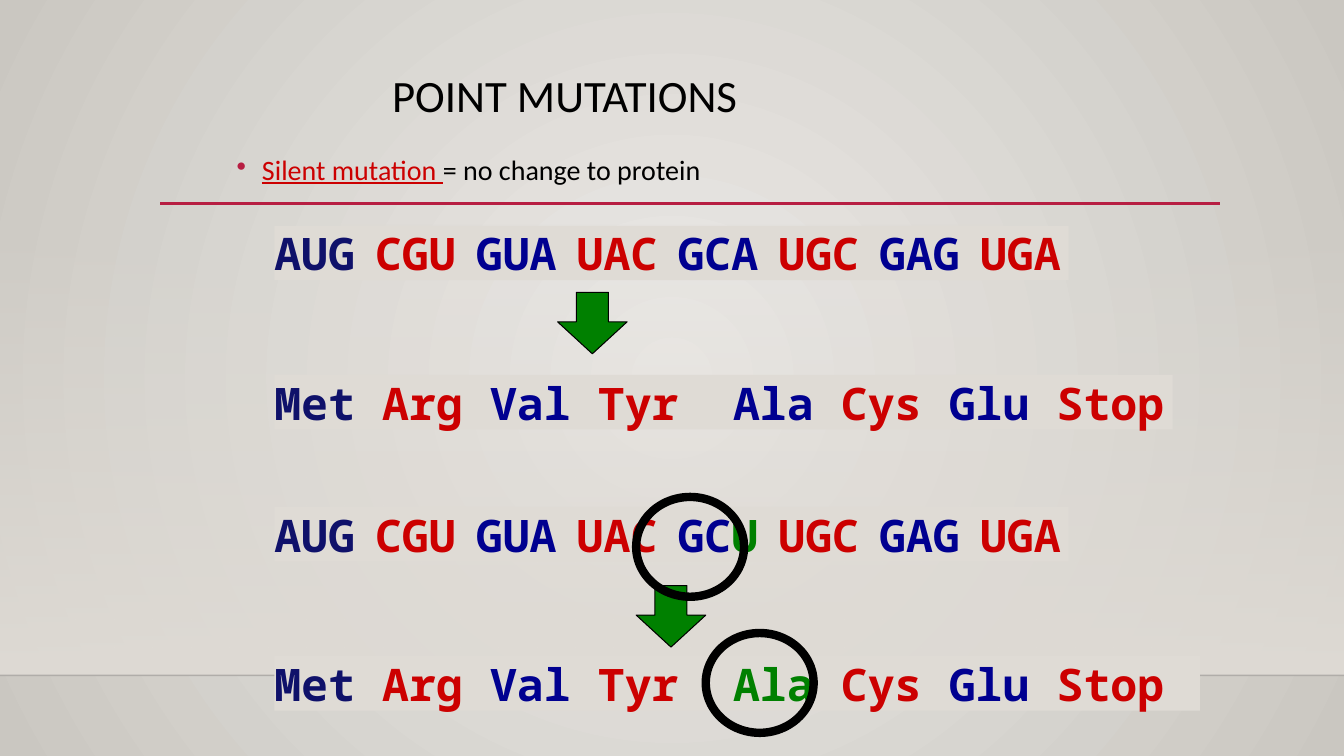
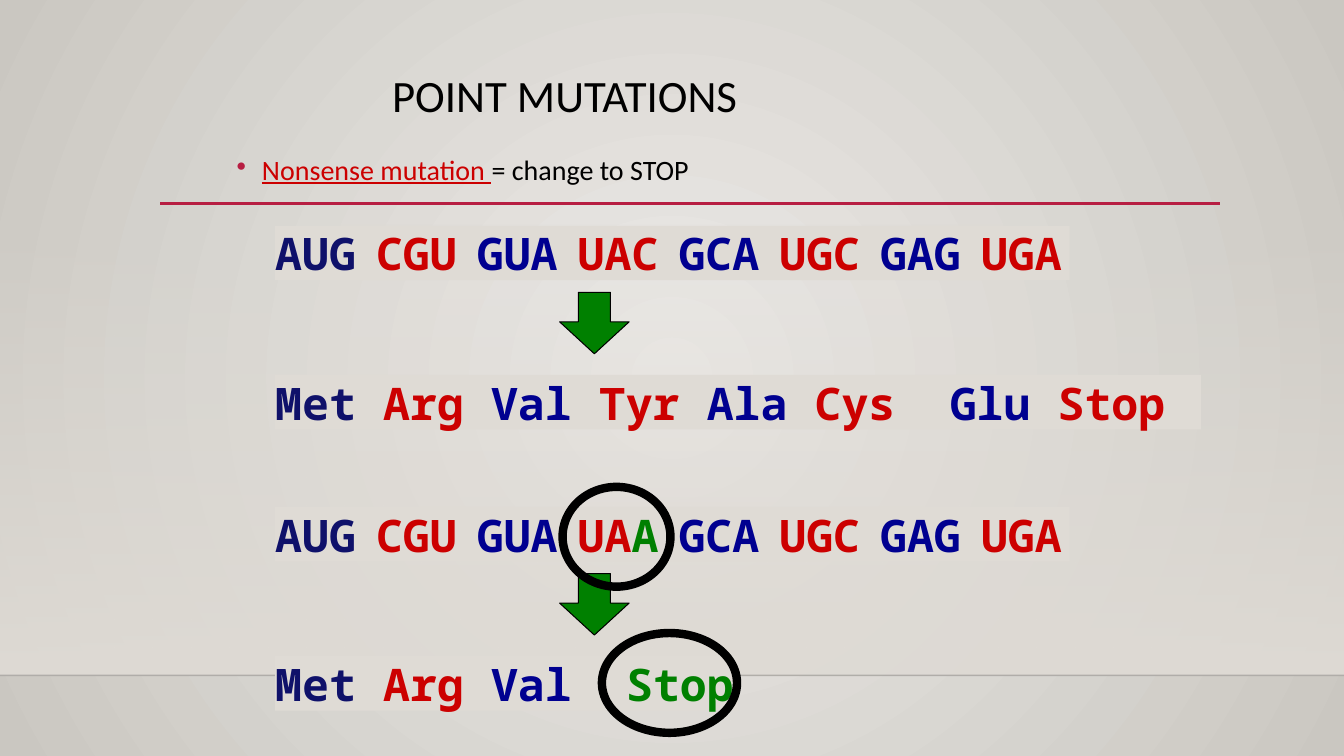
from itertools import accumulate, chain, cycle

from pptx import Presentation
from pptx.dml.color import RGBColor
from pptx.enum.shapes import MSO_CONNECTOR as Connector, MSO_SHAPE as Shape
from pptx.enum.text import MSO_ANCHOR as Anchor, PP_ALIGN as Align
from pptx.oxml.ns import qn
from pptx.oxml.xmlchemy import OxmlElement as Element
from pptx.util import Pt

PX = 9144  # EMU; 100 px to the inch
WIDTH, HEIGHT = 1333, 750
COLORS = {
    "black": "000000", "shade": "000001", "crimson": "B71E42",
    "light": "ECEAE7", "dark": "CAC7C1", "panel": "DFDBD5",
    "navy": "0F116A", "red": "CC0000", "blue": "000090", "green": "008000",
}
BODY_FONT, CODE_FONT = "Calibri", "Noto Sans Mono"
ROW_TOPS = (224, 372, 503, 651)
ROW_HEIGHT, CODON_WIDTH = 54, 788
CODON_STEP, ACID_STEP, EXTRA_GAP = 100, 107, 27
CODONS = "AUG CGU GUA UAC GCA UGC GAG UGA"

# "*" marks the start of the changed letters; "wide" is the acid followed by a wider gap.
SLIDES = [
    {
        "term": "Silent mutation ", "meaning": "= no change to protein",
        "left": 272,
        "acids": ("Met Arg Val Tyr Ala Cys Glu Stop", 891, 4),
        "mutant_codons": "AUG CGU GUA UAC GC*U UGC GAG UGA",
        "mutant_acids": ("Met Arg Val Tyr *Ala Cys Glu Stop", 918, 4),
        "arrows": [(553, 290), (631, 581)],
        "rings": [(631, 493, 107), (700, 628, 107)],
    },
    {
        "term": "Nonsense mutation ", "meaning": "= change to STOP",
        "left": 273,
        "acids": ("Met Arg Val Tyr Ala Cys Glu Stop", 918, 6),
        "mutant_codons": "AUG CGU GUA UA*A GCA UGC GAG UGA",
        "mutant_acids": ("Met Arg Val *Stop", 459, 3),
        "arrows": [(555, 290), (555, 569)],
        "rings": [(558, 483, 107), (597, 628, 134)],
    },
]


def rgb(color):
    return RGBColor.from_string(COLORS[color])


def add_element(parent, tag, **attributes):
    child = Element(tag)
    for key, value in attributes.items():
        child.set(key, str(value))
    parent.append(child)
    return child


def set_gradient(fill_parent, stops, radial=False):
    """Fill in an existing gradFill; stops are (color, opacity percent)."""
    gradient = fill_parent.find(".//" + qn("a:gradFill"))
    for child in list(gradient):
        gradient.remove(child)
    stop_list = add_element(gradient, "a:gsLst")
    for position, (color, opacity) in zip((0, 100000), stops):
        stop = add_element(stop_list, "a:gs", pos=position)
        tint = add_element(stop, "a:srgbClr", val=COLORS[color])
        if opacity < 100:
            add_element(tint, "a:alpha", val=opacity * 1000)
    if radial:
        center = add_element(gradient, "a:path", path="circle")
        add_element(center, "a:fillToRect", l=50000, t=50000, r=50000, b=50000)
    else:
        add_element(gradient, "a:lin", ang=5400000, scaled=0)


class Deck:
    def __init__(self):
        self.presentation = Presentation()
        self.presentation.slide_width = WIDTH * PX
        self.presentation.slide_height = HEIGHT * PX
        self.slide = None

    def new_slide(self):
        """Start a slide with the shared background, band and rules."""
        self.slide = self.presentation.slides.add_slide(self.presentation.slide_layouts[6])
        self.slide.background.fill.gradient()
        set_gradient(self.slide.element, [("light", 100), ("dark", 100)], radial=True)
        band = self.shape(Shape.RECTANGLE, 0, 221, WIDTH, 449)
        band.fill.gradient()
        set_gradient(band.element.spPr, [("panel", 0), ("panel", 100)])
        self.rule(0, WIDTH, 670, "shade", 1, opacity=20)
        self.rule(159, 1210, 202, "crimson", 2.5)

    def shape(self, kind, left, top, width, height, fill=None, line=None, weight=0.75):
        shape = self.slide.shapes.add_shape(kind, left * PX, top * PX, width * PX, height * PX)
        shape.shadow.inherit = False
        if fill:
            shape.fill.solid()
            shape.fill.fore_color.rgb = rgb(fill)
        else:
            shape.fill.background()
        if line:
            shape.line.color.rgb = rgb(line)
            shape.line.width = Pt(weight)
        else:
            shape.line.fill.background()
        return shape

    def rule(self, start, end, y, color, weight, opacity=100):
        rule = self.slide.shapes.add_connector(
            Connector.STRAIGHT, start * PX, y * PX, end * PX, y * PX)
        rule.line.color.rgb = rgb(color)
        rule.line.width = Pt(weight)
        if opacity < 100:
            tint = rule.element.spPr.find(".//" + qn("a:srgbClr"))
            add_element(tint, "a:alpha", val=opacity * 1000)
        add_element(rule.element.spPr, "a:effectLst")

    def run(self, paragraph, text, color, size, font=BODY_FONT, **emphasis):
        run = paragraph.add_run()
        run.text = text
        run.font.name, run.font.size = font, Pt(size)
        run.font.color.rgb = rgb(color)
        for key, value in emphasis.items():
            setattr(run.font, key, value)

    def text_box(self, left, top, width, height):
        """Add a wrapping text box and return its paragraph."""
        box = self.slide.shapes.add_textbox(left * PX, top * PX, width * PX, height * PX)
        box.text_frame.word_wrap = True
        paragraph = box.text_frame.paragraphs[0]
        paragraph.line_spacing = 0.9
        return paragraph

    def title(self, text):
        self.run(self.text_box(379, 68, 721, 140), text, "black", 32)

    def definition(self, term, meaning):
        paragraph = self.text_box(225, 150, 924, 106)
        properties = paragraph._p.get_or_add_pPr()
        properties.set("marL", str(25 * PX))
        properties.set("indent", str(-25 * PX))
        bullet_color = add_element(properties, "a:buClr")
        add_element(bullet_color, "a:srgbClr", val=COLORS["crimson"])
        add_element(properties, "a:buChar", char="•")
        self.run(paragraph, term, "red", 20, underline=True)
        self.run(paragraph, meaning, "black", 20)

    def sequence(self, text, left, top, width, step, wide=None):
        """Write a row of triplets at tab stops, in alternating colors."""
        row = self.shape(Shape.RECTANGLE, left, top, width, ROW_HEIGHT, fill="panel")
        frame = row.text_frame
        frame.margin_left = frame.margin_right = frame.margin_top = frame.margin_bottom = 0
        frame.vertical_anchor = Anchor.MIDDLE
        frame.word_wrap = True
        paragraph = frame.paragraphs[0]
        paragraph.alignment = Align.LEFT
        words = text.split()
        tabs = add_element(paragraph._p.get_or_add_pPr(), "a:tabLst")
        gaps = [step + EXTRA_GAP * (index == wide) for index in range(1, len(words))]
        for position in accumulate(gaps):
            add_element(tabs, "a:tab", pos=position * PX, algn="l")
        colors = chain(["navy"], cycle(["red", "blue"]))
        for index, (word, color) in enumerate(zip(words, colors), 1):
            kept, _, changed = word.partition("*")
            pieces = [[part, tint] for part, tint in ((kept, color), (changed, "green")) if part]
            if index < len(words):
                pieces[-1][0] += "\t"
            for part, tint in pieces:
                self.run(paragraph, part, tint, 32, CODE_FONT, bold=True)

    def arrow(self, left, top):
        arrow = self.shape(Shape.DOWN_ARROW, left, top, 69, 61, "green", "black")
        arrow.adjustments[0], arrow.adjustments[1] = 0.46, 0.52

    def ring(self, left, top, width):
        # Outline weight in points.
        self.shape(Shape.OVAL, left, top, width, 99, line="black", weight=6)


def main():
    deck = Deck()
    for content in SLIDES:
        deck.new_slide()
        deck.title("POINT MUTATIONS")
        deck.definition(content["term"], content["meaning"])
        pairs = ((CODONS, content["acids"]),
                 (content["mutant_codons"], content["mutant_acids"]))
        for (codon_top, acid_top), (codons, (acids, width, wide)) in zip(
                (ROW_TOPS[:2], ROW_TOPS[2:]), pairs):
            deck.sequence(codons, content["left"], codon_top, CODON_WIDTH, CODON_STEP)
            deck.sequence(acids, content["left"], acid_top, width, ACID_STEP, wide)
        for spot in content["arrows"]:
            deck.arrow(*spot)
        for spot in content["rings"]:
            deck.ring(*spot)
    deck.presentation.save("out.pptx")


if __name__ == "__main__":
    main()
